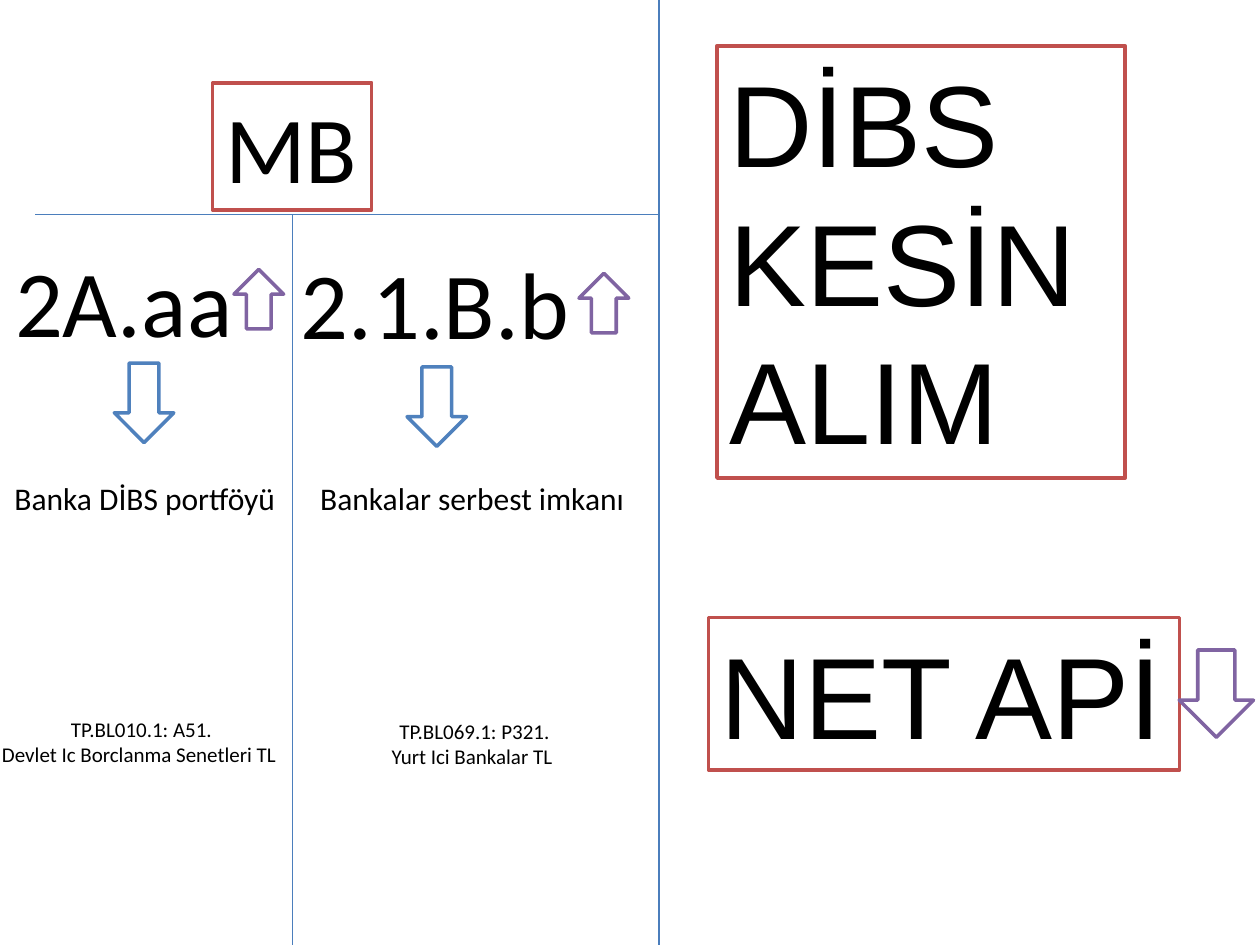
from lxml import etree
from pptx import Presentation
from pptx import util as u
from pptx.dml.color import RGBColor
from pptx.enum import shapes, text
from pptx.oxml.ns import qn

BLACK = RGBColor(0x00, 0x00, 0x00)
WHITE = RGBColor(0xFF, 0xFF, 0xFF)
RULE_BLUE = RGBColor(0x4B, 0x7E, 0xBC)
BLUE = RGBColor(0x4F, 0x81, 0xBD)
RED = RGBColor(0xC0, 0x50, 0x4D)
PURPLE = RGBColor(0x80, 0x64, 0xA2)
WIDTH, HEIGHT = 720, 540
UP = shapes.MSO_SHAPE.UP_ARROW
DOWN = shapes.MSO_SHAPE.DOWN_ARROW


def write_text(shape, content, size=18, font="Calibri", centred=False):
    """Put each line of content in its own paragraph."""
    frame = shape.text_frame
    frame.word_wrap = False
    frame.auto_size = text.MSO_AUTO_SIZE.SHAPE_TO_FIT_TEXT
    frame.vertical_anchor = text.MSO_ANCHOR.TOP
    frame.text = content
    for paragraph in frame.paragraphs:
        paragraph.alignment = text.PP_ALIGN.CENTER if centred else text.PP_ALIGN.LEFT
        paragraph.font.size = u.Pt(size)
        paragraph.font.name = font
        paragraph.font.color.rgb = BLACK


class Board:
    outline_width = 2
    rule_width = 0.75

    def __init__(self, slide):
        self.slide = slide

    def rule(self, x1, y1, x2, y2):
        line = self.slide.shapes.add_connector(
            shapes.MSO_CONNECTOR.STRAIGHT, *map(u.Pt, (x1, y1, x2, y2)))
        line.line.color.rgb = RULE_BLUE
        line.line.width = u.Pt(self.rule_width)
        etree.SubElement(line._element.spPr, qn("a:effectLst"))

    def label(self, content, box, **style):
        write_text(self.slide.shapes.add_textbox(*map(u.Pt, box)), content, **style)

    def outlined(self, kind, box, color, rotation=0):
        shape = self.slide.shapes.add_shape(kind, *map(u.Pt, box))
        shape.shadow.inherit = False
        shape.fill.solid()
        shape.fill.fore_color.rgb = WHITE
        shape.line.color.rgb = color
        shape.line.width = u.Pt(self.outline_width)
        shape.rotation = rotation
        return shape

    def framed(self, content, box, **style):
        frame = self.outlined(shapes.MSO_SHAPE.RECTANGLE, box, RED)
        write_text(frame, content, **style)


def main():
    presentation = Presentation()
    presentation.slide_width, presentation.slide_height = u.Pt(WIDTH), u.Pt(HEIGHT)
    board = Board(presentation.slides.add_slide(presentation.slide_layouts[6]))

    # T-account and divider
    top, middle, divider = 122.4, 167, 376.6
    board.rule(20.2, top, divider, top)
    board.rule(middle, top, middle, HEIGHT)
    board.rule(divider, 0, divider, HEIGHT)
    board.framed("MB", (121.5, 47.3, 90.9, 72.7), size=54)

    # Account codes, with their rise and what they stand for
    board.label("2A.aa", (1.5, 135.5, 140.5, 72.7), size=54)
    board.label("2.1.B.b", (164.7, 136.6, 169.2, 72.7), size=54)
    for left, y in ((133.7, 153.9), (330.9, 156.2)):
        board.outlined(UP, (left, y, 28.4, 34), PURPLE)
    for left, y in ((65.3, 207.5), (232.6, 209.7)):
        board.outlined(DOWN, (left, y, 34, 45.4), BLUE)
    board.label("Banka DİBS portföyü", (1.2, 270, 165.6, 29.1))
    board.label("Bankalar serbest imkanı", (175.9, 270, 190, 29.1))

    # Data series
    board.label("TP.BL010.1: A51.\nDevlet Ic Borclanma Senetleri TL ",
                (-7, 406.1, 175.7, 36.4), size=12, centred=True)
    board.label("TP.BL069.1: P321.\nYurt Ici Bankalar TL ",
                (216, 406.8, 110.2, 36.4), size=12, centred=True)

    # Operation and its effect
    board.framed("DİBS\nKESİN\nALIM", (409.7, 26.2, 233.3, 247), size=66, font="Arial")
    board.framed("NET APİ", (404.9, 352.8, 269.2, 87.3), size=66, font="Arial")
    board.outlined(UP, (673.8, 371.4, 42.5, 49.9), PURPLE, rotation=180)

    presentation.save("out.pptx")


if __name__ == "__main__":
    main()
